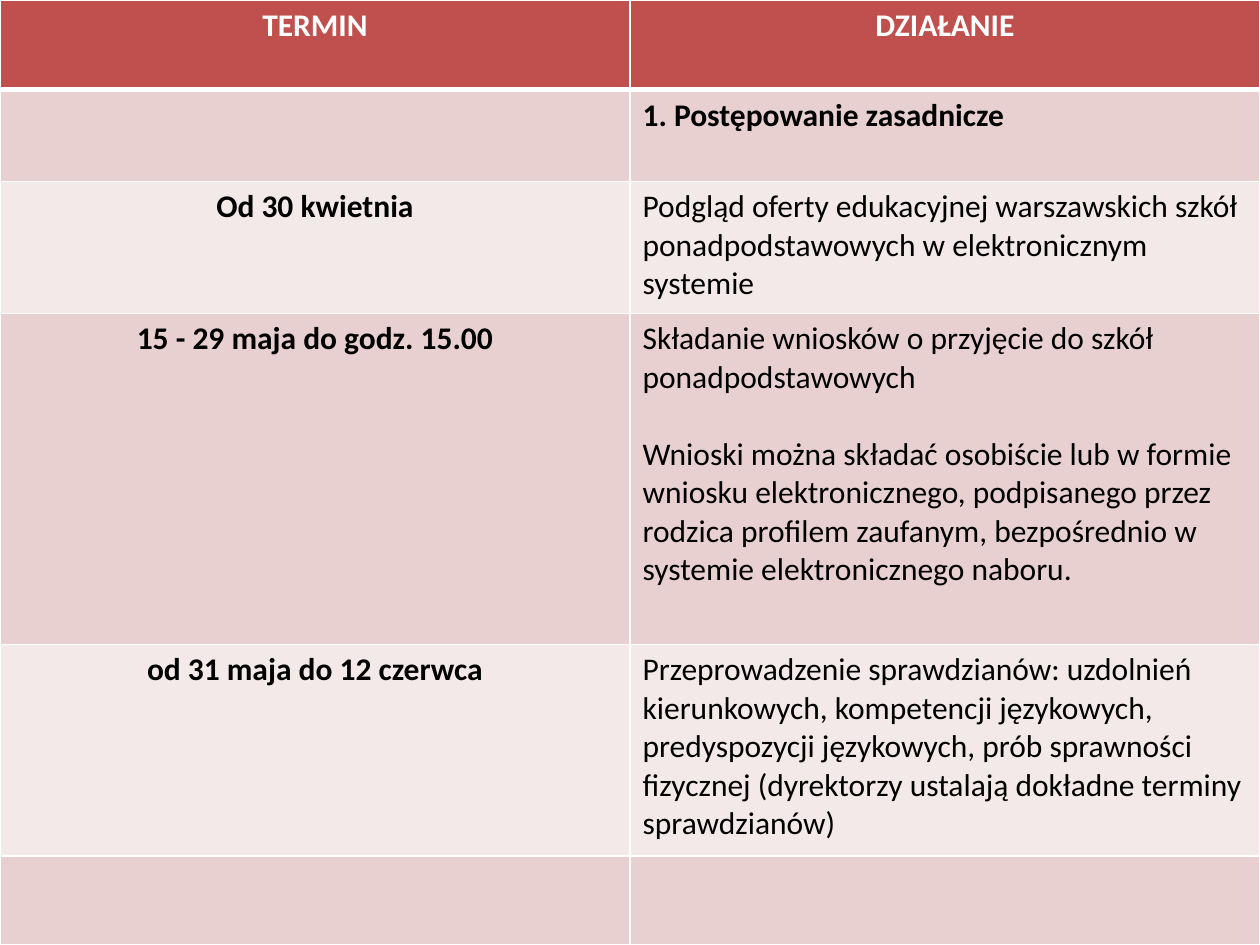
from lxml.etree import SubElement
from pptx import Presentation
from pptx.dml.color import RGBColor as RGB
from pptx.enum.text import PP_ALIGN as Align
from pptx.oxml.ns import qn
from pptx.util import Inches, Pt

WHITE = RGB(0xFF, 0xFF, 0xFF)
BLACK = RGB(0x00, 0x00, 0x00)
RED = RGB(0xC0, 0x50, 0x4D)
BANDS = RGB(0xE8, 0xD0, 0xD0), RGB(0xF4, 0xE9, 0xE9)

# Row height in percent of the slide, date, action paragraphs
HEADER = (9.5, "TERMIN", ["DZIAŁANIE"])
SECTION = (9.7, "", ["1. Postępowanie zasadnicze"])
STEPS = [
    (14, "Od 30 kwietnia",
     ["Podgląd oferty edukacyjnej warszawskich szkół ponadpodstawowych "
      "w elektronicznym systemie"]),
    (35, "15 - 29 maja do godz. 15.00",
     ["Składanie wniosków o przyjęcie do szkół ponadpodstawowych",
      "Wnioski można składać osobiście lub w formie wniosku elektronicznego, "
      "podpisanego przez rodzica profilem zaufanym, bezpośrednio w systemie "
      "elektronicznego naboru."]),
    (22.4, "od 31 maja do 12 czerwca",
     ["Przeprowadzenie sprawdzianów: uzdolnień kierunkowych, kompetencji "
      "językowych, predyspozycji językowych, prób sprawności fizycznej "
      "(dyrektorzy ustalają dokładne terminy sprawdzianów)"]),
    (9.4, "", []),
]
ROWS = [HEADER, SECTION, *STEPS]


def write(tf, paragraphs, size=18, font="Calibri", color=BLACK, bold=False,
          align=Align.LEFT, gap=22):
    """Fill a text frame, leaving a gap between paragraphs."""
    for i, text in enumerate(paragraphs):
        p = tf.add_paragraph() if i else tf.paragraphs[0]
        p.alignment = align
        p.space_before = Pt(gap if i else 0)
        r = p.add_run()
        r.text = text
        r.font.size, r.font.name, r.font.bold = Pt(size), font, bold
        r.font.color.rgb = color


class Deck:
    """Holds the table style and the current slide."""
    line, thick = 1, 3

    def __init__(self, prs):
        self.width, self.height = prs.slide_width, prs.slide_height
        self.s = prs.slides.add_slide(prs.slide_layouts[6])

    def borders(self, cell, top, bottom):
        tc_pr = cell._tc.get_or_add_tcPr()
        widths = {"L": self.line, "R": self.line, "T": top, "B": bottom}
        for side, width in widths.items():
            ln = SubElement(tc_pr, qn(f"a:ln{side}"), w=str(Pt(width)))
            fill = SubElement(ln, qn("a:solidFill"))
            SubElement(fill, qn("a:srgbClr"), val=str(WHITE))

    def cell(self, cell, row, paragraphs, **style):
        self.borders(cell, self.thick if row == 1 else self.line,
                     self.thick if row == 0 else self.line)
        cell.fill.solid()
        cell.fill.fore_color.rgb = BANDS[(row - 1) % 2] if row else RED
        write(cell.text_frame, paragraphs, **style)

    def schedule(self, rows):
        table = self.s.shapes.add_table(
            len(rows), 2, 0, 0, self.width, self.height).table
        for i, (share, date, actions) in enumerate(rows):
            table.rows[i].height = int(self.height * share / 100)
            color = BLACK if i else WHITE
            self.cell(table.cell(i, 0), i, [date] if date else [],
                      color=color, bold=True, align=Align.CENTER)
            self.cell(table.cell(i, 1), i, actions, color=color, bold=i < 2,
                      align=Align.LEFT if i else Align.CENTER)


def main():
    prs = Presentation()
    prs.slide_width, prs.slide_height = Inches(10), Inches(7.5)
    # Recruitment schedule over the whole slide
    Deck(prs).schedule(ROWS)
    prs.save("out.pptx")


if __name__ == "__main__":
    main()
